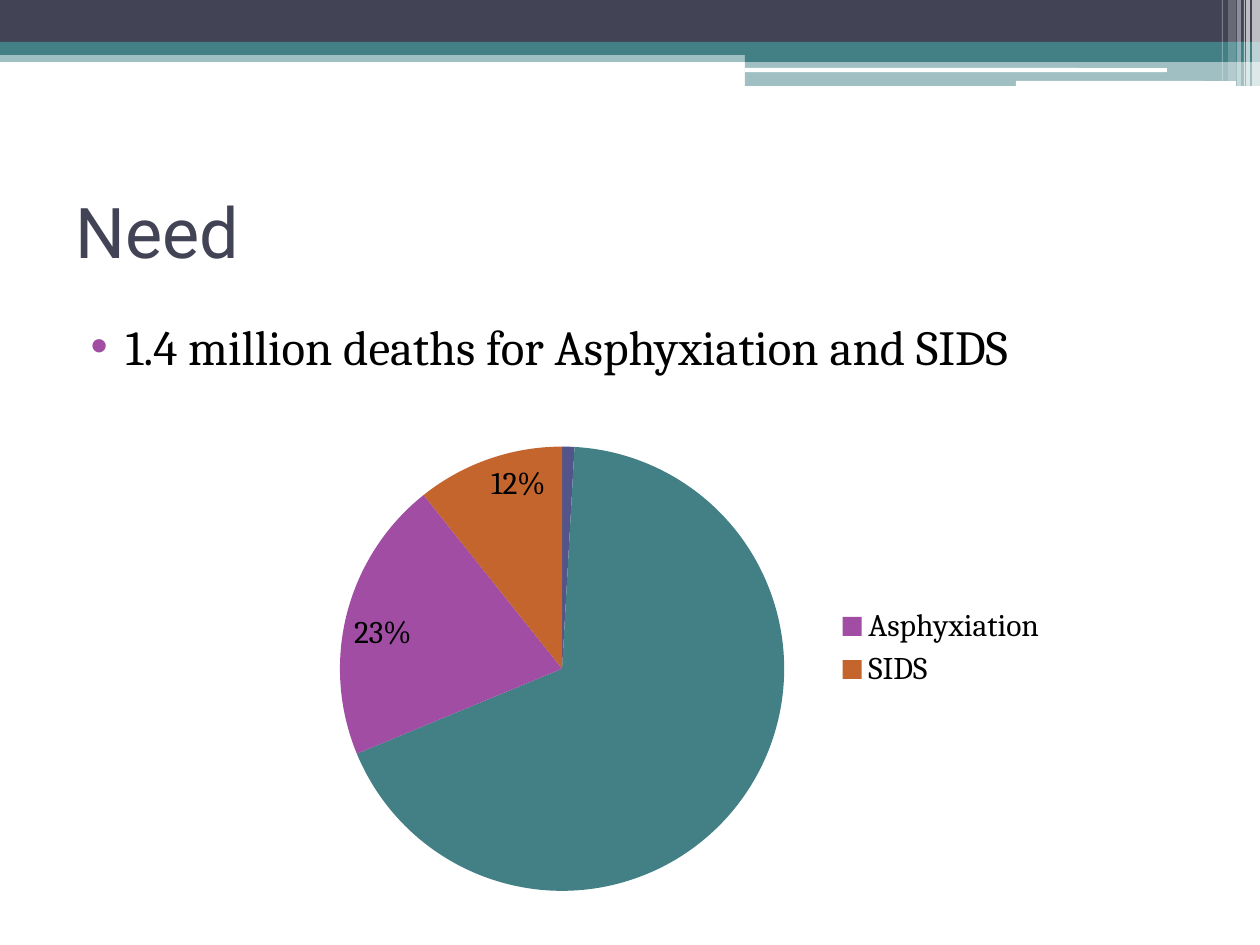
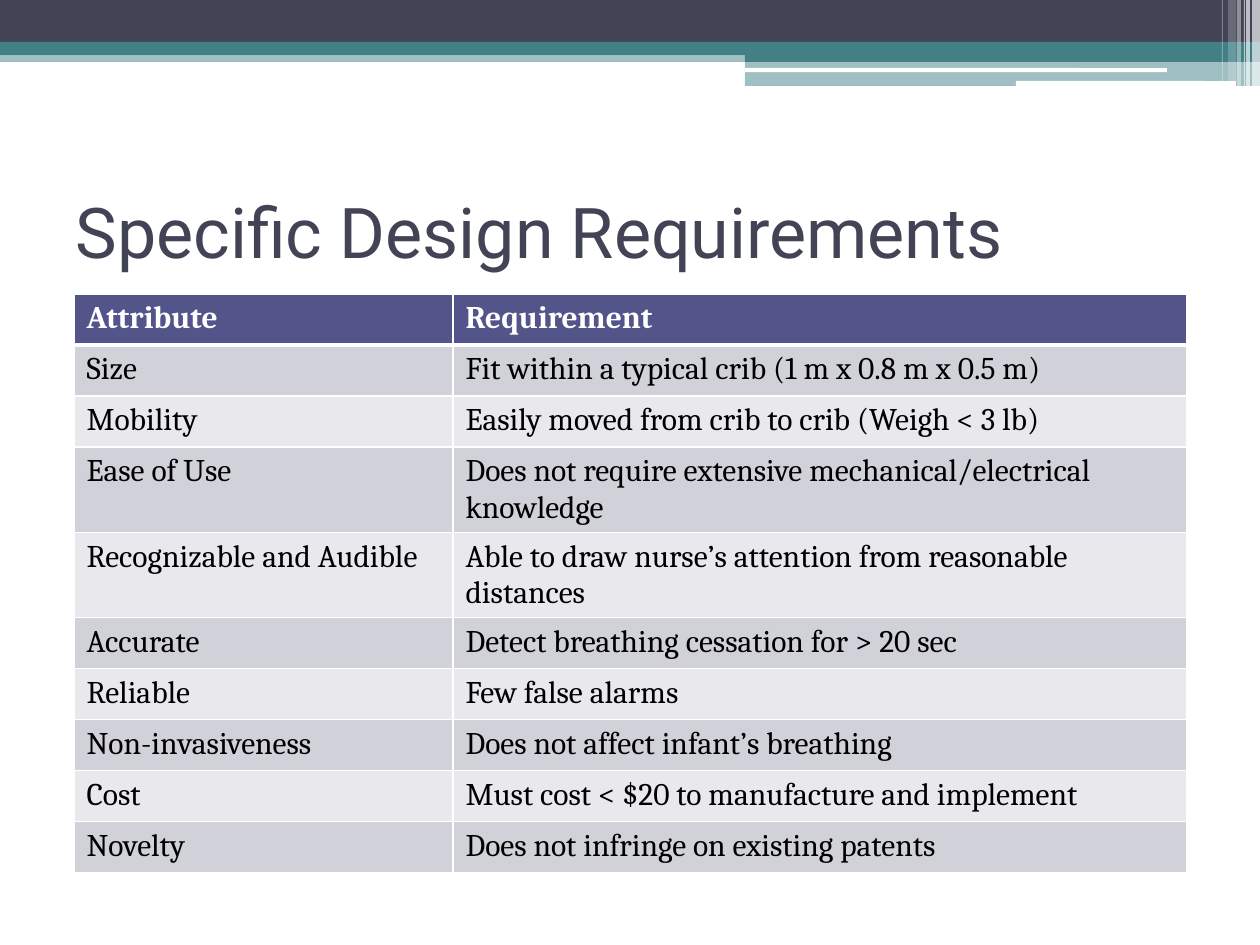
from pptx import Presentation
from pptx.chart.data import CategoryChartData
from pptx.dml.color import RGBColor
from pptx.enum.chart import XL_CHART_TYPE as ChartType, XL_LABEL_POSITION as LabelAt, XL_LEGEND_POSITION as LegendAt
from pptx.enum.shapes import MSO_SHAPE as Preset
from pptx.enum.text import MSO_ANCHOR as Anchor, MSO_AUTO_SIZE as AutoSize, PP_ALIGN as Align
from pptx.oxml import parse_xml
from pptx.oxml.ns import nsdecls
from pptx.util import Pt

EMU_PER_PX = 914400 / 126
SLIDE = (1260, 945)

INK, TEAL, WHITE, BLACK = "424456", "438086", "FFFFFF", "000000"
INDIGO, PURPLE, ORANGE = "53548A", "A04DA3", "C4652D"
ROW_FILLS = ("D1D1DA", "E9E9ED")

TITLE_FORMAT = {"name": "Roboto", "size": Pt(40)}
BULLET_FORMAT = {"name": "Cambria", "size": Pt(28)}
SMALL_FORMAT = {"name": "Cambria", "size": Pt(18)}

TITLE_BOX = (63, 157, 1134, 147)
BULLETS_BOX = (63, 310, 1134, 596)
PIE_BOX = (294, 388, 766, 520)
PIE_DISC = (45, 55, 448, 448)
TABLE_CORNER = (74, 294)
COLUMN_WIDTHS = (379, 734)
LINE_ROW, WRAPPED_ROW = 51, 85
WRAP_LENGTH = 50

BANDS = [
    (Preset.RECTANGLE, (0, 50, 1260, 12), TEAL, 50),
    (Preset.RECTANGLE, (0, 0, 1260, 43), INK, 100),
    (Preset.RECTANGLE, (0, 42, 1260, 13), TEAL, 100),
    (Preset.RECTANGLE, (745, 49, 515, 13), TEAL, 100),
    (Preset.RECTANGLE, (745, 61, 515, 25), TEAL, 50),
    (Preset.ROUNDED_RECTANGLE, (745, 68, 422, 4), WHITE, 100),
    (Preset.ROUNDED_RECTANGLE, (1016, 81, 220, 5), WHITE, 100),
]
STRIPES = [
    (1252, 8, 86, 65),
    (1246, 4, 86, 65),
    (1244, 1, 86, 60),
    (1237, 4, 86, 40),
    (1228, 8, 81, 20),
    (1222, 1, 81, 30),
]

NEED_TITLE = "Need"
NEED_BULLETS = ["1.4 million deaths for Asphyxiation and SIDS"]
DEATHS = [
    ("", 0.01, INDIGO),
    ("", 0.76, TEAL),
    ("Asphyxiation", 0.23, PURPLE),
    ("SIDS", 0.12, ORANGE),
]

REQUIREMENTS_TITLE = "Specific Design Requirements"
REQUIREMENTS = [
    ("Attribute", "Requirement"),
    ("Size", "Fit within a typical crib (1 m x 0.8 m x 0.5 m)"),
    ("Mobility", "Easily moved from crib to crib (Weigh < 3 lb)"),
    ("Ease of Use", "Does not require extensive mechanical/electrical knowledge"),
    ("Recognizable and Audible", "Able to draw nurse’s attention from reasonable distances"),
    ("Accurate", "Detect breathing cessation for > 20 sec"),
    ("Reliable", "Few false alarms"),
    ("Non-invasiveness", "Does not affect infant’s breathing"),
    ("Cost", "Must cost < $20 to manufacture and implement"),
    ("Novelty", "Does not infringe on existing patents"),
]


def px(length):
    return round(length * EMU_PER_PX)


def emu(box):
    return [px(length) for length in box]


def rgb(code):
    return RGBColor.from_string(code)


def apply(target, values):
    for key, value in values.items():
        setattr(target, key, value)


def paint(part, code):
    part.fill.solid()
    part.fill.fore_color.rgb = rgb(code)


def write_font(font, values, code):
    apply(font, values)
    font.color.rgb = rgb(code)


def place(holder, box):
    apply(holder, dict(zip(("left", "top", "width", "height"), emu(box))))
    holder.text_frame.auto_size = AutoSize.NONE


def add_bands(slide):
    master_tree = slide.slide_layout.slide_master.element.cSld.spTree
    stripes = [(Preset.RECTANGLE, (left, 0, width, height), WHITE, opacity)
               for left, width, height, opacity in STRIPES]
    for number, (preset, box, code, opacity) in enumerate(BANDS + stripes, 101):
        band = slide.shapes.add_shape(preset, *emu(box))
        band.shadow.inherit = False
        band.line.fill.background()
        paint(band, code)
        if opacity < 100:
            color = band.element.xpath("./p:spPr/a:solidFill/a:srgbClr")[0]
            color.append(parse_xml(f'<a:alpha {nsdecls("a")} val="{opacity * 1000}"/>'))
        band.element.nvSpPr.cNvPr.set("id", str(number))
        master_tree.append(band.element)


def add_title(slide, wording):
    title = slide.shapes.title
    place(title, TITLE_BOX)
    title.text_frame.text = wording
    title.text_frame.vertical_anchor = Anchor.MIDDLE
    line = title.text_frame.paragraphs[0]
    line.alignment = Align.LEFT
    write_font(line.runs[0].font, TITLE_FORMAT, INK)


def add_bullets(slide, wordings):
    body = slide.placeholders[1]
    place(body, BULLETS_BOX)
    body.text_frame.text = "\n".join(wordings)
    for item in body.text_frame.paragraphs:
        item.space_before = Pt(3)
        write_font(item.runs[0].font, BULLET_FORMAT, BLACK)
        props = item._p.get_or_add_pPr()
        props.set("marL", str(px(50)))
        props.set("indent", str(px(-35)))
        for mark in (f'<a:buClr {nsdecls("a")}><a:srgbClr val="{PURPLE}"/></a:buClr>',
                     f'<a:buChar {nsdecls("a")} char="•"/>'):
            props.append(parse_xml(mark))


def add_deaths_pie(slide):
    shares = CategoryChartData(number_format="0%")
    shares.categories = [cause for cause, _, _ in DEATHS]
    shares.add_series("", [share for _, share, _ in DEATHS])
    chart = slide.shapes.add_chart(ChartType.PIE, *emu(PIE_BOX), shares).chart
    write_font(chart.font, SMALL_FORMAT, BLACK)
    apply(chart, {"has_title": False, "has_legend": True})
    apply(chart.legend, {"position": LegendAt.RIGHT, "include_in_layout": False})
    pie = chart.plots[0]
    pie.vary_by_categories = True
    series = pie.series[0]
    apply(series.data_labels, {"show_value": True, "number_format": "0%",
                               "number_format_is_linked": False, "position": LabelAt.INSIDE_END})

    labels = chart.element.xpath(".//c:ser/c:dLbls")[0]
    legend = chart.element.xpath(".//c:legend")[0]
    hidden = 0
    for index, (cause, _, code) in enumerate(DEATHS):
        paint(series.points[index].format, code)
        if not cause:
            for parent, tag, offset in ((labels, "dLbl", 0), (legend, "legendEntry", 1)):
                parent.insert(hidden + offset, parse_xml(
                    f'<c:{tag} {nsdecls("c")}><c:idx val="{index}"/><c:delete val="1"/></c:{tag}>'))
            hidden += 1

    plot_area = chart.element.xpath(".//c:plotArea")[0]
    for layout in plot_area.xpath("./c:layout"):
        plot_area.remove(layout)
    sizes = PIE_BOX[2:] * 2
    spans = "".join(f'<c:{side} val="{length / size:.2f}"/>'
                    for side, length, size in zip("xywh", PIE_DISC, sizes))
    plot_area.insert(0, parse_xml(
        f'<c:layout {nsdecls("c")}><c:manualLayout><c:layoutTarget val="inner"/>'
        f'<c:xMode val="edge"/><c:yMode val="edge"/>{spans}</c:manualLayout></c:layout>'))


def add_borders(cell, widths):
    props = cell._tc.get_or_add_tcPr()
    for side, width in widths.items():
        props.append(parse_xml(
            f'<a:ln{side} {nsdecls("a")} w="{Pt(width)}"><a:solidFill>'
            f'<a:srgbClr val="{WHITE}"/></a:solidFill></a:ln{side}>'))


def add_requirements_table(slide):
    heights = [WRAPPED_ROW if len(need) > WRAP_LENGTH else LINE_ROW for _, need in REQUIREMENTS]
    box = (*TABLE_CORNER, sum(COLUMN_WIDTHS), sum(heights))
    table = slide.shapes.add_table(len(REQUIREMENTS), len(COLUMN_WIDTHS), *emu(box)).table
    for column, width in zip(table.columns, COLUMN_WIDTHS):
        column.width = px(width)
    for r, (wordings, height) in enumerate(zip(REQUIREMENTS, heights)):
        table.rows[r].height = px(height)
        heading = r == 0
        for c, wording in enumerate(wordings):
            cell = table.cell(r, c)
            cell.text = wording
            add_borders(cell, {"L": 1, "R": 1, "T": 3 if r == 1 else 1, "B": 3 if heading else 1})
            paint(cell, INDIGO if heading else ROW_FILLS[(r - 1) % 2])
            write_font(cell.text_frame.paragraphs[0].runs[0].font,
                       {**SMALL_FORMAT, "bold": heading}, WHITE if heading else BLACK)


def main():
    deck = Presentation()
    apply(deck, dict(zip(("slide_width", "slide_height"), emu(SLIDE))))
    title_and_content, title_only = deck.slide_layouts[1], deck.slide_layouts[5]

    need = deck.slides.add_slide(title_and_content)
    add_bands(need)
    add_title(need, NEED_TITLE)
    add_bullets(need, NEED_BULLETS)
    add_deaths_pie(need)

    requirements = deck.slides.add_slide(title_only)
    add_title(requirements, REQUIREMENTS_TITLE)
    add_requirements_table(requirements)

    deck.save("out.pptx")


if __name__ == "__main__":
    main()
